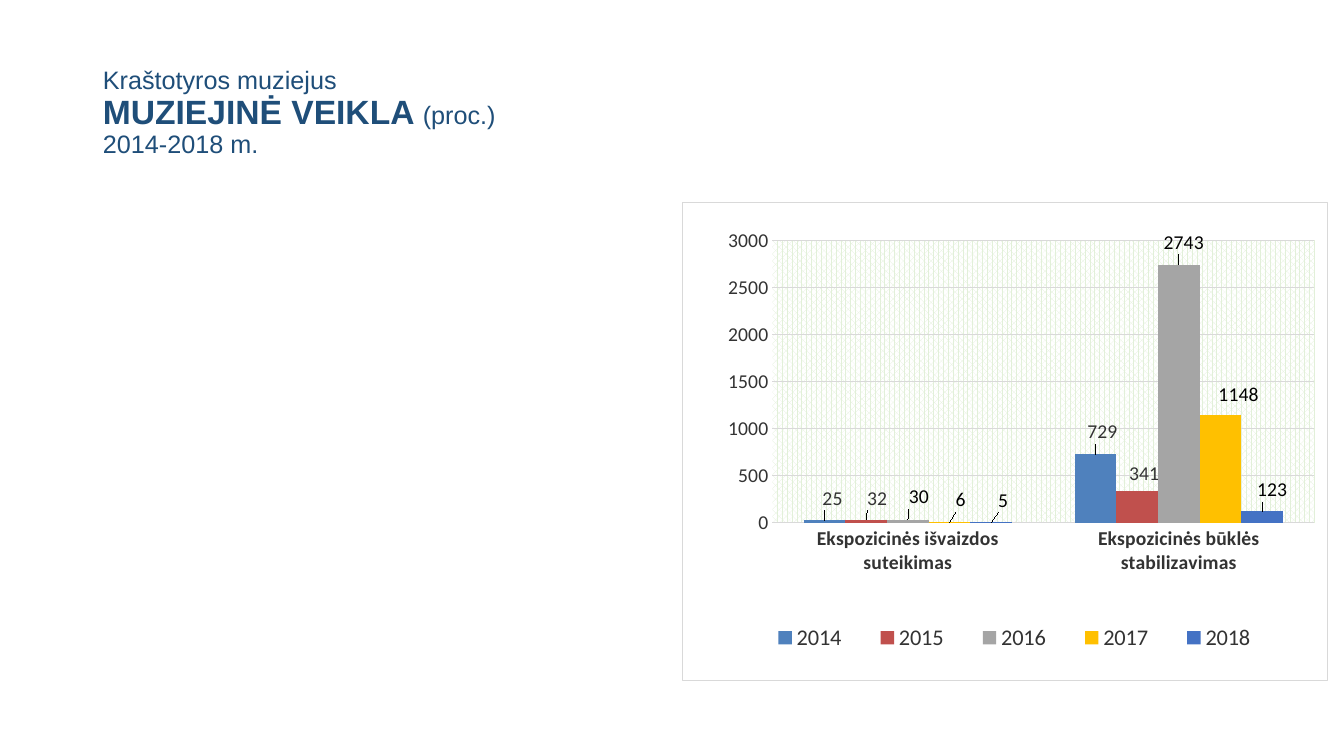
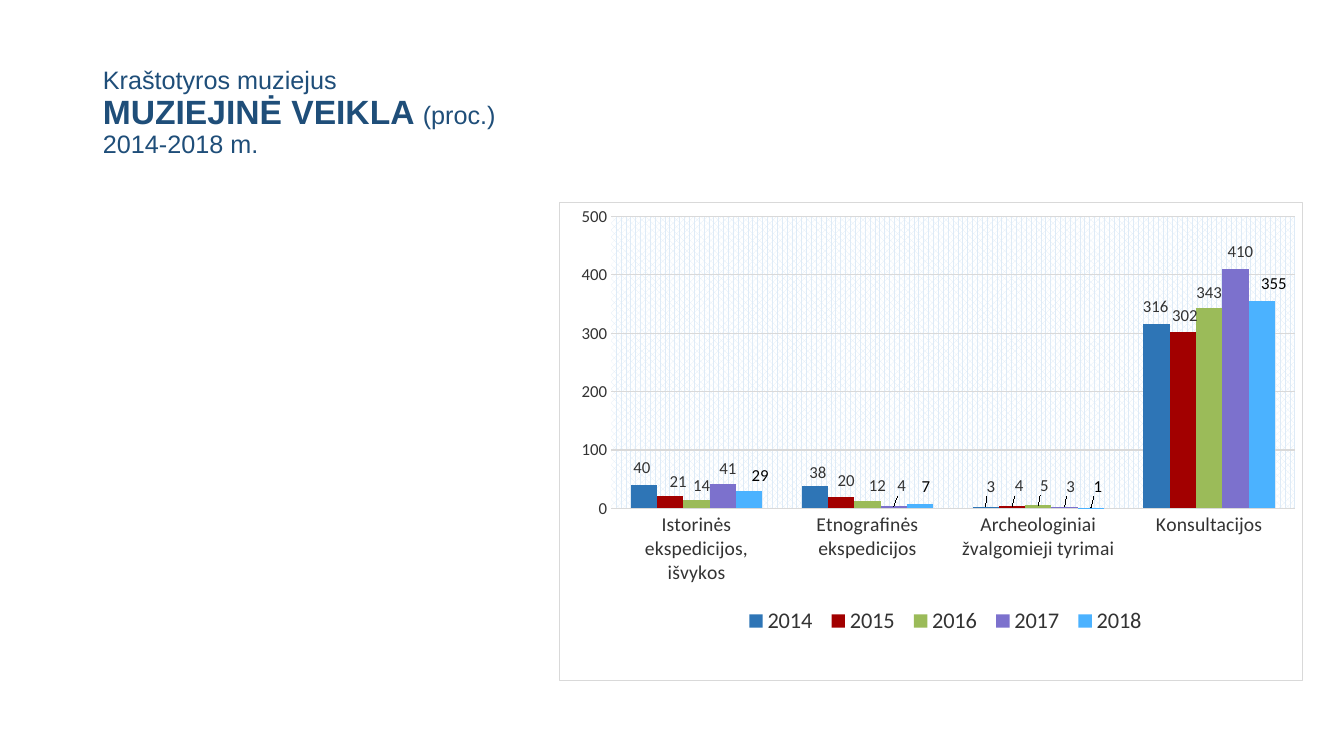
from lxml import etree
from pptx import Presentation
from pptx.chart.data import CategoryChartData
from pptx.dml.color import RGBColor
from pptx.enum.chart import XL_CHART_TYPE, XL_LABEL_POSITION, XL_LEGEND_POSITION, XL_TICK_MARK
from pptx.enum.text import MSO_ANCHOR, MSO_AUTO_SIZE, PP_ALIGN
from pptx.oxml import parse_xml
from pptx.oxml.ns import nsdecls, qn
from pptx.util import Inches, Pt

COLUMNS = XL_CHART_TYPE.COLUMN_CLUSTERED
OUTSIDE_END = XL_LABEL_POSITION.OUTSIDE_END
LEGEND_BOTTOM = XL_LEGEND_POSITION.BOTTOM
NO_TICK = XL_TICK_MARK.NONE
MIDDLE = MSO_ANCHOR.MIDDLE
NO_AUTOFIT = MSO_AUTO_SIZE.NONE
LEFT = PP_ALIGN.LEFT

# Shared style
NAVY = RGBColor(0x1F, 0x4E, 0x79)
BLACK = RGBColor(0x00, 0x00, 0x00)
DARK = RGBColor(0x33, 0x33, 0x33)
GRID = RGBColor(0xD9, 0xD9, 0xD9)
PALE_GREEN = RGBColor(0xE2, 0xF0, 0xD9)
PALE_BLUE = RGBColor(0xDE, 0xEB, 0xF7)
TITLE_FONT = "Arial"
CHART_FONT = "Calibri"
CHART_TOP, CHART_HEIGHT = 2, 4.76
YEARS = ["2014", "2015", "2016", "2017", "2018"]

# Label nudges are (right, down) in hundredths of an inch, one pair per column
RESTORATION = {
    "left": 6.76, "width": 6.41,
    "categories": ["Ekspozicinės išvaizdos suteikimas",
                   "Ekspozicinės būklės stabilizavimas"],
    "values": [(25, 729), (32, 341), (30, 2743), (6, 1148), (5, 123)],
    "nudges": [[(8, -6), (7, -6)], [(11, -5), (7, -1)], [(11, -7), (5, -6)],
               [(11, -6), (18, -4)], [(12, -6), (10, -5)]],
    "colors": [RGBColor(0x4F, 0x81, 0xBD), RGBColor(0xC0, 0x50, 0x4D),
               RGBColor(0xA5, 0xA5, 0xA5), RGBColor(0xFF, 0xC0, 0x00),
               RGBColor(0x44, 0x72, 0xC4)],
    "label_colors": [DARK, DARK, BLACK, BLACK, BLACK],
    "label_size": 14, "value_size": 14, "bold_categories": True,
    "maximum": 3000, "step": 500, "hatch": PALE_GREEN,
    "plot": (0.14, 0.08, 0.84, 0.59), "legend": (0.1, 0.87, 0.83, 0.08),
}
RESEARCH = {
    "left": 5.54, "width": 7.38,
    "categories": ["Istorinės ekspedicijos, išvykos", "Etnografinės ekspedicijos",
                   "Archeologiniai žvalgomieji tyrimai", "Konsultacijos"],
    "values": [(40, 38, 3, 316), (21, 20, 4, 302), (14, 12, 5, 343),
               (41, 4, 3, 410), (29, 7, 1, 355)],
    "nudges": [[(-2, -3), (3, 0), (5, -6), (-1, -3)],
               [(8, -1), (5, -2), (7, -6), (2, -2)],
               [(5, -1), (10, -2), (6, -6), (0, -2)],
               [(5, -2), (8, -6), (6, -6), (5, -3)],
               [(11, -2), (6, -4), (7, -7), (12, -3)]],
    "colors": [RGBColor(0x2E, 0x75, 0xB6), RGBColor(0xA2, 0x00, 0x00),
               RGBColor(0x9B, 0xBB, 0x59), RGBColor(0x7C, 0x71, 0xCD),
               RGBColor(0x4B, 0xB2, 0xFF)],
    "label_colors": [DARK, DARK, DARK, DARK, BLACK],
    "label_size": 12, "value_size": 12, "bold_categories": False,
    "maximum": 500, "step": 100, "hatch": PALE_BLUE,
    "plot": (0.07, 0.03, 0.92, 0.61), "legend": (0.24, 0.84, 0.56, 0.07),
}


def style_font(font, size, color, name=CHART_FONT, bold=False):
    font.size = Pt(size)
    font.color.rgb = color
    font.name = name
    font.bold = bold


def manual_layout(**settings):
    """Build a chart layout element from its settings, in schema order."""
    layout = etree.Element(qn("c:layout"))
    manual = etree.SubElement(layout, qn("c:manualLayout"))
    for tag, value in settings.items():
        etree.SubElement(manual, qn(f"c:{tag}"), val=str(value))
    return layout


def box_layout(box, **target):
    x, y, w, h = box
    return manual_layout(**target, xMode="edge", yMode="edge", x=x, y=y, w=w, h=h)


def remove_layout(parent):
    for layout in parent.findall(qn("c:layout")):
        parent.remove(layout)


def add_title(slide):
    title = slide.shapes.title
    title.left, title.top = Inches(0.92), Inches(0.4)
    title.width, title.height = Inches(11.5), Inches(1.45)
    frame = title.text_frame
    frame.auto_size = NO_AUTOFIT
    frame.vertical_anchor = MIDDLE
    paragraph = frame.paragraphs[0]
    paragraph.alignment = LEFT
    paragraph.line_spacing = 0.9
    lines = [[("Kraštotyros muziejus", 18, False)],
             [("MUZIEJINĖ VEIKLA ", 24, True), ("(proc.)", 18, False)],
             [("2014-2018 m.", 18, False)]]
    for number, line in enumerate(lines):
        if number:
            paragraph.add_line_break()
        for text, size, bold in line:
            run = paragraph.add_run()
            run.text = text
            style_font(run.font, size, NAVY, TITLE_FONT, bold)
    # Line breaks take the small size so that they do not stretch the lines
    for line_break in paragraph._p.findall(qn("a:br")):
        etree.SubElement(line_break, qn("a:rPr"), sz="1800")


def style_axis(axis, size, bold=False):
    axis.major_tick_mark = axis.minor_tick_mark = NO_TICK
    axis.format.line.fill.background()
    style_font(axis.tick_labels.font, size, DARK, bold=bold)


def style_series(series, color, label_color, nudges, data):
    series.format.fill.solid()
    series.format.fill.fore_color.rgb = color
    series.invert_if_negative = False
    labels = series.data_labels
    labels.show_value = True
    labels.position = OUTSIDE_END
    style_font(labels.font, data["label_size"], label_color)
    for index in range(len(nudges)):
        label = series.points[index].data_label
        style_font(label.font, data["label_size"], label_color)
        label.position = OUTSIDE_END
    for label, (right, down) in zip(series._element.iter(qn("c:dLbl")), nudges):
        label.insert(1, manual_layout(x=round(right / 100 / data["width"], 4),
                                      y=round(down / 100 / CHART_HEIGHT, 4)))


def style_areas(chart, data):
    """Hatch the plot, fix its place and frame the whole chart."""
    plot_area = chart._chartSpace.chart.plotArea
    remove_layout(plot_area)
    plot_area.insert(0, box_layout(data["plot"], layoutTarget="inner"))
    plot_area.append(parse_xml(
        f'<c:spPr {nsdecls("c", "a")}><a:pattFill prst="pct70">'
        f'<a:fgClr><a:srgbClr val="{data["hatch"]}"/></a:fgClr>'
        '<a:bgClr><a:srgbClr val="FFFFFF"/></a:bgClr></a:pattFill></c:spPr>'))
    chart._chartSpace.chart.addnext(parse_xml(
        f'<c:spPr {nsdecls("c", "a")}><a:solidFill><a:srgbClr val="FFFFFF"/></a:solidFill>'
        f'<a:ln w="9525"><a:solidFill><a:srgbClr val="{GRID}"/></a:solidFill></a:ln></c:spPr>'))


def add_legend(chart, box):
    chart.has_legend = True
    legend = chart.legend
    legend.position = LEGEND_BOTTOM
    legend.include_in_layout = False
    style_font(legend.font, 16, DARK)
    remove_layout(legend._element)
    legend._element.find(qn("c:legendPos")).addnext(box_layout(box))


def add_column_chart(slide, data):
    chart_data = CategoryChartData()
    chart_data.categories = data["categories"]
    for year, values in zip(YEARS, data["values"]):
        chart_data.add_series(year, values)
    chart = slide.shapes.add_chart(
        COLUMNS, Inches(data["left"]), Inches(CHART_TOP),
        Inches(data["width"]), Inches(CHART_HEIGHT), chart_data).chart
    style_font(chart.font, 10, BLACK)
    chart.has_title = False

    # Axes
    style_axis(chart.category_axis, 14, data["bold_categories"])
    scale = chart.value_axis
    style_axis(scale, data["value_size"])
    scale.minimum_scale, scale.maximum_scale = 0, data["maximum"]
    scale.major_unit = data["step"]
    grid_line = scale.major_gridlines.format.line
    grid_line.color.rgb = GRID
    grid_line.width = Pt(0.75)

    # Columns
    columns = chart.plots[0]
    columns.gap_width, columns.overlap = 150, 0
    columns.vary_by_categories = False
    for series, color, label_color, nudges in zip(
            columns.series, data["colors"], data["label_colors"], data["nudges"]):
        style_series(series, color, label_color, nudges, data)

    add_legend(chart, data["legend"])
    style_areas(chart, data)


def main():
    deck = Presentation()
    deck.slide_width, deck.slide_height = Inches(13.33), Inches(7.5)
    title_only = deck.slide_layouts[5]
    for data in (RESTORATION, RESEARCH):
        slide = deck.slides.add_slide(title_only)
        add_title(slide)
        add_column_chart(slide, data)
    deck.save("out.pptx")


if __name__ == "__main__":
    main()
